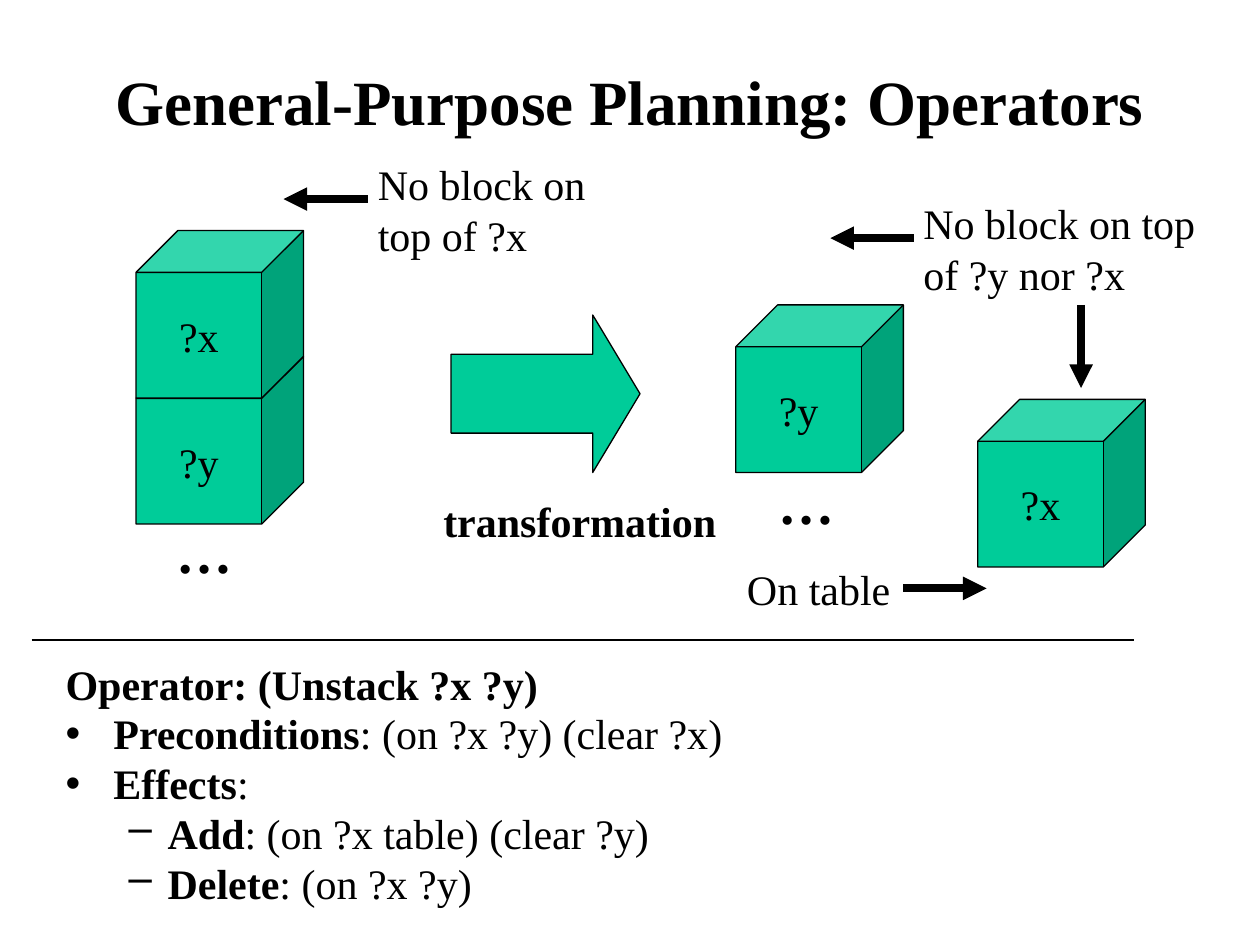
from lxml.etree import SubElement
from pptx import Presentation
from pptx.dml.color import RGBColor
from pptx.enum.shapes import MSO_CONNECTOR, MSO_SHAPE
from pptx.enum.text import MSO_ANCHOR, MSO_AUTO_SIZE, PP_ALIGN
from pptx.oxml.ns import qn
from pptx.util import Inches, Pt

FONT, BLACK, GREEN = "Times New Roman", "000000", "00CC99"


def rgb(value):
    """Turn a hex string into a colour."""
    return RGBColor.from_string(value)


def style(r, size=24, bold=False):
    """Format one run."""
    r.font.name, r.font.size, r.font.bold = FONT, Pt(size), bold
    r.font.color.rgb = rgb(BLACK)


def place(sp, left, top, width, height):
    """Move and resize a shape, in inches."""
    sp.left, sp.top = Inches(left), Inches(top)
    sp.width, sp.height = Inches(width), Inches(height)


def add_title(s, text):
    """Fill the title placeholder."""
    sp = s.shapes.title
    place(sp, 0.75, 0.17, 8.5, 1.25)
    tf = sp.text_frame
    tf.text = text
    tf.auto_size = MSO_AUTO_SIZE.NONE
    tf.vertical_anchor = MSO_ANCHOR.MIDDLE
    p = tf.paragraphs[0]
    p.alignment = PP_ALIGN.CENTER
    style(p.runs[0], 36, True)


def add_label(s, text, left, top, width, height, size=24, bold=False, wrap=True):
    """Add a text box with one paragraph."""
    sp = s.shapes.add_textbox(Inches(left), Inches(top), Inches(width), Inches(height))
    tf = sp.text_frame
    tf.text, tf.word_wrap = text, wrap
    style(tf.paragraphs[0].runs[0], size, bold)


def add_solid(s, kind, left, top, width, height, adjustments):
    """Add a green outlined preset shape."""
    sp = s.shapes.add_shape(kind, Inches(left), Inches(top), Inches(width), Inches(height))
    sp.shadow.inherit = False
    for i, value in enumerate(adjustments):
        sp.adjustments[i] = value
    sp.fill.solid()
    sp.fill.fore_color.rgb = rgb(GREEN)
    sp.line.color.rgb = rgb(BLACK)
    sp.line.width = Pt(0.75)
    return sp


def add_block(s, name, left, top):
    """Add a named cube."""
    tf = add_solid(s, MSO_SHAPE.CUBE, left, top, 1.33, 1.33, [0.25]).text_frame
    tf.text, tf.word_wrap = name, False
    tf.vertical_anchor = MSO_ANCHOR.MIDDLE
    p = tf.paragraphs[0]
    p.alignment = PP_ALIGN.CENTER
    style(p.runs[0])


def add_line(s, x1, y1, x2, y2, width=4.5, arrow=True):
    """Add a straight line, with an arrowhead at its end if wanted."""
    ln = s.shapes.add_connector(
        MSO_CONNECTOR.STRAIGHT, Inches(x1), Inches(y1), Inches(x2), Inches(y2))
    ln.line.color.rgb = rgb(BLACK)
    ln.line.width = Pt(width)
    if arrow:
        SubElement(ln.line._get_or_add_ln(), qn("a:tailEnd"), type="triangle")
    SubElement(ln._element.spPr, qn("a:effectLst"))


def set_bullet(p, char, margin, indent):
    """Set the indents and the bullet of a paragraph."""
    pPr = p._p.get_or_add_pPr()
    pPr.set("marL", str(Inches(margin)))
    pPr.set("indent", str(Inches(indent)))
    if char:
        SubElement(pPr, qn("a:buFontTx"))
        SubElement(pPr, qn("a:buChar"), char=char)
    else:
        SubElement(pPr, qn("a:buNone"))


def add_operator(s, items):
    """Fill the body placeholder with (level, bullet, bold text, plain text) items."""
    sp = s.placeholders[1]
    place(sp, 0.42, 5.25, 6.17, 2)
    tf = sp.text_frame
    tf.auto_size = MSO_AUTO_SIZE.NONE
    indents = [(0.38, -0.38), (0.81, -0.31)]
    for i, (level, char, head, rest) in enumerate(items):
        p = tf.add_paragraph() if i else tf.paragraphs[0]
        p.level, p.line_spacing, p.space_before = level, 0.8, Pt(5.5)
        set_bullet(p, char, *indents[level])
        for text, bold in ((head, True), (rest, False)):
            if text:
                r = p.add_run()
                r.text = text
                style(r, bold=bold)


def main():
    """Build the slide."""
    prs = Presentation()
    prs.slide_width, prs.slide_height = Inches(10), Inches(7.5)
    s = prs.slides.add_slide(prs.slide_layouts[1])
    add_title(s, "General-Purpose Planning: Operators")

    for name, left, top in [("?y", 1.08, 2.83), ("?x", 1.08, 1.83),
                            ("?y", 5.84, 2.42), ("?x", 7.76, 3.17)]:
        add_block(s, name, left, top)
    add_solid(s, MSO_SHAPE.RIGHT_ARROW, 3.58, 2.5, 1.5, 1.25, [0.5, 0.3])
    add_label(s, "transformation", 3.42, 3.88, 2.37, 0.5, bold=True, wrap=False)
    for left, top in [(1.3, 4.06), (6.08, 3.67)]:
        add_label(s, "…", left, top, 0.65, 0.63, 32, True, False)

    add_label(s, "No block on top of ?x", 2.9, 1.21, 1.93, 0.9)
    add_label(s, "No block on top of ?y nor ?x", 7.23, 1.52, 2.52, 0.9)
    add_label(s, "On table", 5.83, 4.42, 1.67, 0.5)
    for ends in [(2.92, 1.58, 2.25, 1.58), (7.25, 1.89, 6.59, 1.89),
                 (8.58, 2.42, 8.58, 3.08), (7.17, 4.67, 7.83, 4.67)]:
        add_line(s, *ends)

    add_line(s, 0.25, 5.08, 9, 5.08, 0.75, False)
    add_operator(s, [
        (0, "", "Operator: (Unstack ?x ?y)", ""),
        (0, "•", "Preconditions", ": (on ?x ?y) (clear ?x)"),
        (0, "•", "Effects", ":"),
        (1, "–", "Add", ": (on ?x table) (clear ?y)"),
        (1, "–", "Delete", ": (on ?x ?y)"),
    ])
    prs.save("out.pptx")


if __name__ == "__main__":
    main()
